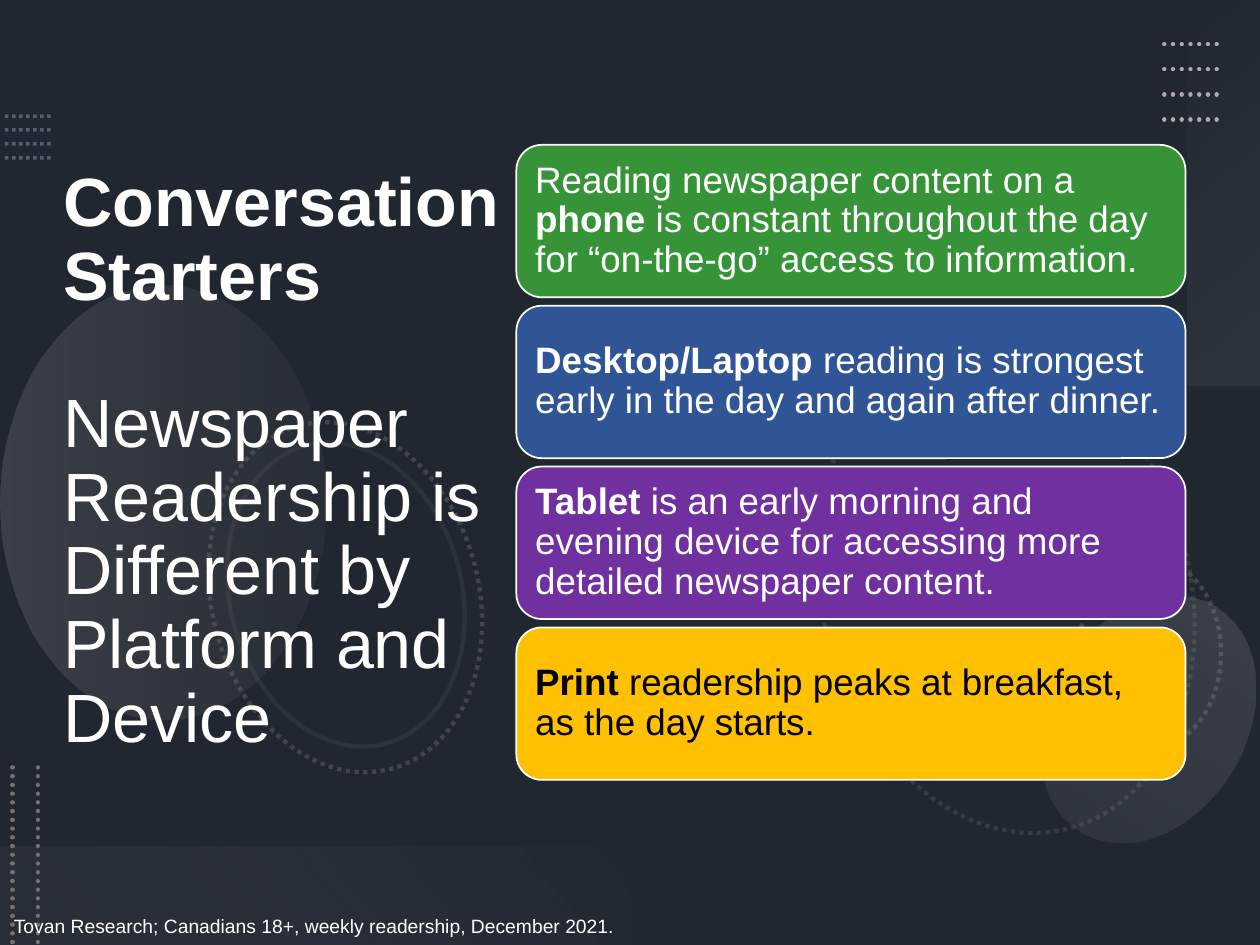
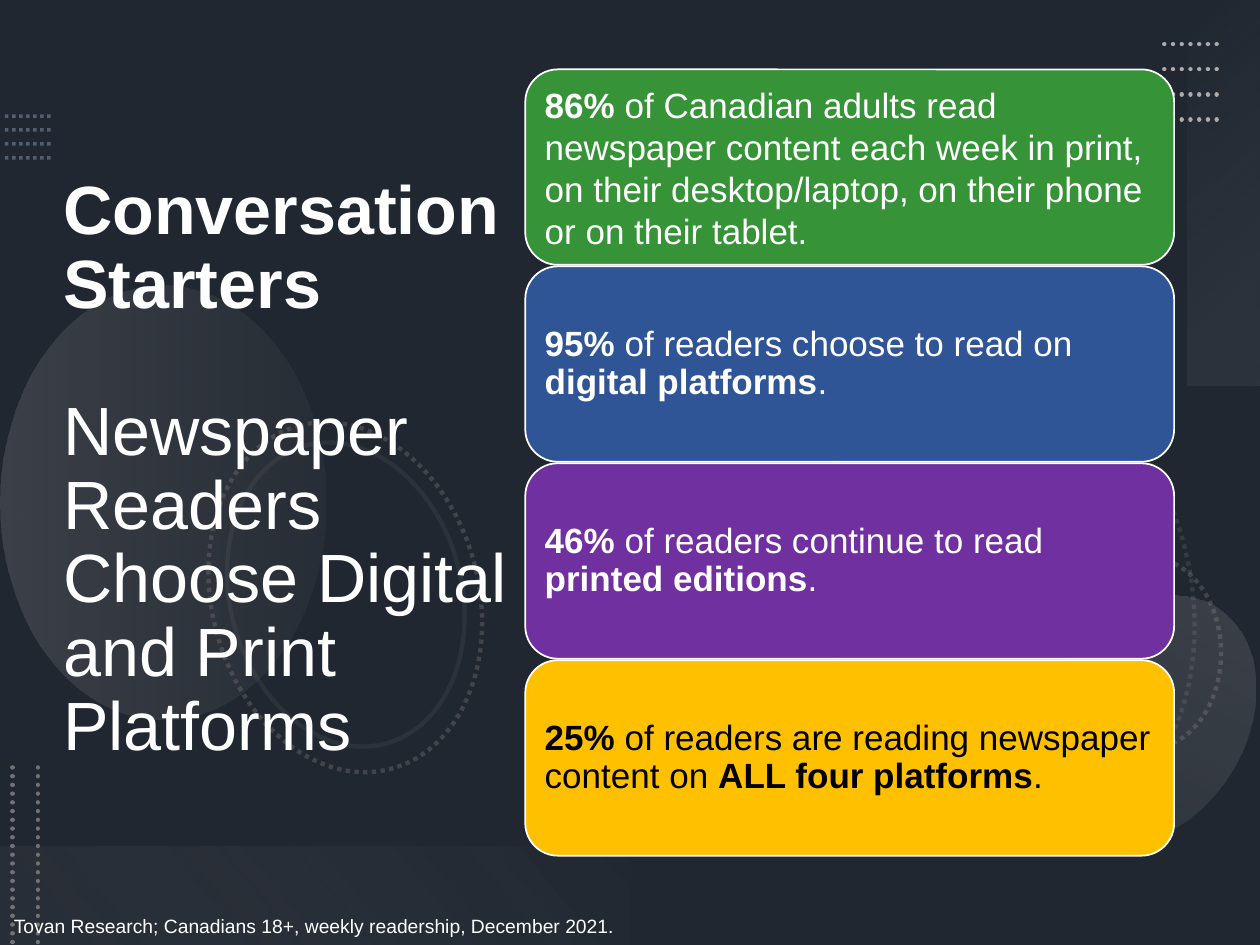
import collections

import pptx
import pptx.dml.color
import pptx.enum.dml
import pptx.enum.shapes
import pptx.enum.text
import pptx.oxml
import pptx.oxml.ns
import pptx.util
from pptx.util import Cm

COLOURS = {
    "slate": "44546A", "black": "000000", "white": "FFFFFF",
    "steel": "8497B0", "grey": "767171", "silver": "AFABAB",
    "pale": "F5F5F5", "mist": "F1F0F0",
    "green": "369337", "blue": "2F5597", "purple": "7030A0", "gold": "FFC000",
}
FONT = "Arial"
SOURCE = "Tovan Research; Canadians 18+, weekly readership, December 2021."
CARD_COLOURS = [("green", "white"), ("blue", "white"),
                ("purple", "white"), ("gold", "black")]
SHAPES = pptx.enum.shapes.MSO_SHAPE
ANCHOR = pptx.enum.text.MSO_ANCHOR
DOTS = pptx.enum.dml.MSO_LINE.ROUND_DOT

Box = collections.namedtuple("Box", "left top width height")
PAGE = Box(0, 0, 25.4, 19.05)

# left, top, width, height, rotation, dash style, opacity
RINGS_BEHIND = [(15.32, 8.2, 9.91, 7.42, 75, DOTS, 25),
                (21.26, 11.73, 3.84, 2.87, 270, DOTS, 40)]
RINGS_FRONT = [(3.38, 9.35, 7.16, 5.38, 75, DOTS, 40),
               (3.86, 9.65, 6.22, 4.67, 75, None, 15)]

STORIES = [
    {
        "title": "Newspaper Readership is Different by Platform and Device",
        "title_box": Box(1.02, 1.6, 9.37, 15.44),
        "cards_box": Box(10.41, 2.92, 13.49, 12.8),
        "gap": 0.17, "inset": 0.23, "size": 21, "spacings": [0.9] * 4,
        "cards": [
            "Reading newspaper content on a *phone* is constant throughout "
            "the day for “on-the-go” access to information.",
            "*Desktop/Laptop* reading is strongest early in the day and again "
            "after dinner.",
            "*Tablet* is an early morning and evening device for accessing "
            "more detailed newspaper content.",
            "*Print* readership peaks at breakfast, as the day starts.",
        ],
    },
    {
        "title": "Newspaper Readers Choose Digital and Print Platforms",
        "title_box": Box(1.02, 1.91, 9.47, 15.14),
        "cards_box": Box(10.59, 1.4, 13.08, 15.85),
        "gap": 0.03, "inset": 0.2, "size": 20, "spacings": [1.0] + [0.9] * 3,
        "cards": [
            "*86%* of Canadian adults read newspaper content each week in "
            "print, on their desktop/laptop, on their phone or on their tablet.",
            "*95%* of readers choose to read on *digital platforms*.",
            "*46%* of readers continue to read *printed editions*.",
            "*25%* of readers are reading newspaper content on "
            "*ALL four platforms*.",
        ],
    },
]


def colour(name):
    """Return the named colour as an RGB value."""
    return pptx.dml.color.RGBColor.from_string(COLOURS[name])


def apply(target, **values):
    """Set every given attribute on the target."""
    for name, value in values.items():
        setattr(target, name, value)


def set_opacity(shape, percents):
    """Give the shape's colours, in order, their opacity in percent."""
    tag = pptx.oxml.ns.qn("a:srgbClr")
    for node, percent in zip(list(shape.element.iter(tag)), percents):
        alpha = pptx.oxml.parse_xml(
            f'<a:alpha {pptx.oxml.ns.nsdecls("a")} val="{percent * 1000}"/>')
        node.append(alpha)


def add_plain(page, kind, box, rotation=0):
    """Add a preset shape without shadow, fill or outline."""
    shape = page.shapes.add_shape(kind, *map(Cm, box))
    shape.rotation = rotation
    shape.shadow.inherit = False
    shape.fill.background()
    shape.line.fill.background()
    return shape


def add_fade(page, kind, box, rotation, stops, angle):
    """Add a shape whose gradient runs clockwise at the given angle."""
    shape = add_plain(page, kind, box, rotation)
    shape.fill.gradient()
    shape.fill.gradient_angle = 360 - angle
    for stop, (position, name, _) in zip(shape.fill.gradient_stops, stops):
        stop.color.rgb = colour(name)
        stop.position = position
    set_opacity(shape, [opacity for _, _, opacity in stops])


def add_ring(page, box, left, top, width, height, rotation, dash, opacity):
    """Add a faint elliptical outline inside the box."""
    ring = add_plain(page, SHAPES.OVAL,
                     Box(box.left + left, box.top + top, width, height), rotation)
    ring.line.color.rgb = colour("grey")
    apply(ring.line, width=pptx.util.Pt(2.5), dash_style=dash)
    set_opacity(ring, [opacity])


def add_dotted_lines(page, box, count, name, width=2.5, opacity=100,
                     upright=False, rounded=True):
    """Spread parallel dotted lines evenly across the box."""
    for index in range(count):
        share = index / (count - 1)
        if upright:
            start = (box.left + share * box.width, box.top)
            end = (start[0], box.top + box.height)
        else:
            start = (box.left, box.top + share * box.height)
            end = (box.left + box.width, start[1])
        rule = page.shapes.add_connector(
            pptx.enum.shapes.MSO_CONNECTOR.STRAIGHT, *map(Cm, start + end))
        rule.line.color.rgb = colour(name)
        apply(rule.line, width=pptx.util.Pt(width), dash_style=DOTS)
        if rounded:
            rule.line.fill
            rule.element.spPr.find(pptx.oxml.ns.qn("a:ln")).set("cap", "rnd")
        rule.element.spPr.append(pptx.oxml.parse_xml(
            f'<a:effectLst {pptx.oxml.ns.nsdecls("a")}/>'))
        if opacity < 100:
            set_opacity(rule, [opacity])


def add_backdrop(page, box):
    """Draw the dark ground with its ellipses, fades and dotted lines."""
    page.background.fill.solid()
    page.background.fill.fore_color.rgb = colour("slate")
    shade = add_plain(page, SHAPES.RECTANGLE, box)
    shade.fill.solid()
    shade.fill.fore_color.rgb = colour("black")
    set_opacity(shade, [53])

    def inside(left, top, width, height):
        """Shift a box into the page area."""
        return Box(box.left + left, box.top + top, width, height)

    add_dotted_lines(page, inside(0.1, 2.34, 0.92, 0.84), 4, "steel",
                     width=2, opacity=50, rounded=False)
    for ring in RINGS_BEHIND:
        add_ring(page, box, *ring)
    add_fade(page, SHAPES.OVAL, inside(-1.09, 6.86, 8.74, 6.55), 270,
             [(0, "silver", 20), (1, "grey", 10)], 90)
    add_fade(page, SHAPES.OVAL, inside(21.16, 11.86, 3.96, 5.28), 210,
             [(0, "silver", 10), (1, "silver", 20)], 90)
    for ring in RINGS_FRONT:
        add_ring(page, box, *ring)
    add_fade(page, SHAPES.RECTANGLE, inside(20.78, 3.15, 7.77, 1.47), 270,
             [(0, "pale", 0), (1, "silver", 10)], 140)
    add_dotted_lines(page, inside(23.47, 0.89, 1.14, 1.52), 4, "silver")
    add_fade(page, SHAPES.RECTANGLE, inside(0, 17.07, 12.7, 1.98), 180,
             [(0.1, "grey", 10), (1, "mist", 0)], 140)
    add_dotted_lines(page, inside(0.25, 15.47, 0.51, 3.58), 2, "grey",
                     upright=True)


def write(para, text, size, name="white"):
    """Write text into the paragraph, with the parts between stars in bold."""
    for index, part in enumerate(text.split("*")):
        if part:
            span = para.add_run()
            span.text = part
            apply(span.font, name=FONT, size=pptx.util.Pt(size),
                  bold=index % 2 == 1)
            span.font.color.rgb = colour(name)


def add_title(page, box, text):
    """Place the title placeholder in front of the backdrop and fill it."""
    title = page.shapes.title
    title.element.getparent().append(title.element)
    apply(title, **{side: Cm(value) for side, value in box._asdict().items()})
    frame = title.text_frame
    apply(frame, word_wrap=True, vertical_anchor=ANCHOR.MIDDLE,
          auto_size=pptx.enum.text.MSO_AUTO_SIZE.NONE)
    heading, subject = frame.paragraphs[0], frame.add_paragraph()
    for para, words in ((heading, "*Conversation Starters*"), (subject, text)):
        apply(para, line_spacing=0.9, alignment=pptx.enum.text.PP_ALIGN.LEFT,
              space_before=pptx.util.Pt(0))
        write(para, words, 39)
    subject.space_before = pptx.util.Pt(42)


def add_source(page, box):
    """Write the source line at the foot of the page."""
    note = page.shapes.add_textbox(*map(Cm, box))
    note.text_frame.word_wrap = True
    write(note.text_frame.paragraphs[0], SOURCE, 11)


def add_cards(page, box, story):
    """Stack the rounded cards evenly in the box."""
    count = len(story["cards"])
    height = (box.height - (count - 1) * story["gap"]) / count
    rows = zip(story["cards"], CARD_COLOURS, story["spacings"])
    for index, (text, (fill, ink), spacing) in enumerate(rows):
        top = box.top + index * (height + story["gap"])
        card = add_plain(page, SHAPES.ROUNDED_RECTANGLE,
                         Box(box.left, top, box.width, height))
        card.fill.solid()
        card.fill.fore_color.rgb = colour(fill)
        card.line.color.rgb = colour("white")
        card.line.width = pptx.util.Pt(1)
        frame = card.text_frame
        apply(frame, word_wrap=True, vertical_anchor=ANCHOR.MIDDLE)
        apply(frame, **{f"margin_{side}": Cm(story["inset"])
                        for side in ("left", "top", "right", "bottom")})
        para = frame.paragraphs[0]
        apply(para, line_spacing=spacing,
              alignment=pptx.enum.text.PP_ALIGN.LEFT)
        write(para, text, story["size"], ink)


def add_story(deck, story):
    """Build one conversation starter slide."""
    page = deck.slides.add_slide(deck.slide_layouts[5])
    add_backdrop(page, PAGE)
    add_title(page, story["title_box"], story["title"])
    add_source(page, Box(0.03, 18.31, 20.75, 0.74))
    add_cards(page, story["cards_box"], story)


def main():
    """Build and save the deck."""
    deck = pptx.Presentation()
    apply(deck, slide_width=Cm(PAGE.width), slide_height=Cm(PAGE.height))
    for story in STORIES:
        add_story(deck, story)
    deck.save("out.pptx")


if __name__ == "__main__":
    main()
